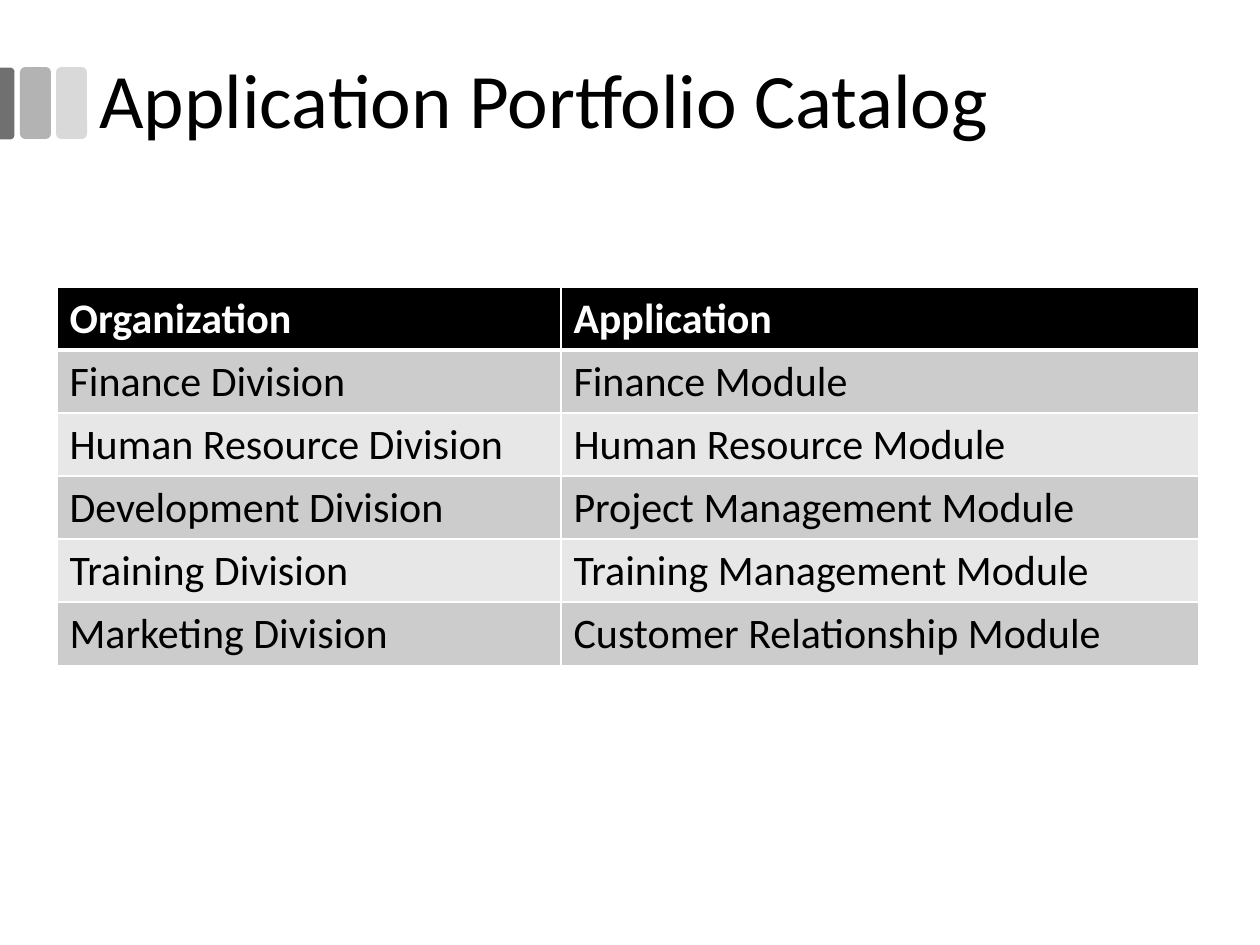
import pptx
import pptx.util
import pptx.dml.color
import pptx.enum.shapes
import pptx.enum.text
import pptx.oxml
import pptx.oxml.ns

RGB = pptx.dml.color.RGBColor
SHAPE = pptx.enum.shapes.MSO_SHAPE
ANCHOR = pptx.enum.text.MSO_ANCHOR

BLACK = RGB(0x00, 0x00, 0x00)
WHITE = RGB(0xFF, 0xFF, 0xFF)
DARK = RGB(0x70, 0x70, 0x70)
MID = RGB(0xB3, 0xB3, 0xB3)
PALE = RGB(0xD9, 0xD9, 0xD9)
BANDS = (RGB(0xCC, 0xCC, 0xCC), RGB(0xE7, 0xE7, 0xE7))

SCALE = 914400 // 126  # EMU in one px

ROWS = (
    ("Organization", "Application"),
    ("Finance Division", "Finance Module"),
    ("Human Resource Division", "Human Resource Module"),
    ("Development Division", "Project Management Module"),
    ("Training Division", "Training Management Module"),
    ("Marketing Division", "Customer Relationship Module"),
)


def emu(*px):
    return [pptx.util.Emu(n * SCALE) for n in px]


class Deck:
    font = "Calibri"

    def __init__(self, wide, high):
        self.prs = pptx.Presentation()
        self.prs.slide_width, self.prs.slide_height = emu(wide, high)
        self.slide = self.prs.slides.add_slide(self.prs.slide_layouts[6])

    def run(self, para, text, size, color, bold=False):
        run = para.add_run()
        run.text = text
        run.font.name = self.font
        run.font.size = pptx.util.Pt(size)
        run.font.bold = bold
        run.font.color.rgb = color

    def bar(self, box, color, kind=SHAPE.ROUNDED_RECTANGLE, turn=0, adjust=()):
        bar = self.slide.shapes.add_shape(kind, *emu(*box))
        bar.shadow.inherit = False
        bar.fill.solid()
        bar.fill.fore_color.rgb = color
        bar.line.fill.background()
        bar.rotation = turn
        for i, value in enumerate(adjust):
            bar.adjustments[i] = value

    def title(self, box, text):
        frame = self.slide.shapes.add_textbox(*emu(*box)).text_frame
        frame.word_wrap = True
        frame.vertical_anchor = ANCHOR.MIDDLE
        para = frame.paragraphs[0]
        para.line_spacing = 0.9
        self.run(para, text, 44, BLACK)

    def border(self, cell, side, width):
        line = pptx.oxml.parse_xml(
            f'<a:{side} {pptx.oxml.ns.nsdecls("a")} w="{pptx.util.Pt(width)}">'
            f'<a:solidFill><a:srgbClr val="{WHITE}"/></a:solidFill></a:{side}>')
        # Borders come before the fill, in the order they are added
        props = cell._tc.get_or_add_tcPr()
        fill = props.find(pptx.oxml.ns.qn("a:solidFill"))
        fill.addprevious(line)

    def table(self, left, top, widths, height, rows):
        box = emu(left, top, sum(widths), height * len(rows))
        table = self.slide.shapes.add_table(len(rows), len(widths), *box).table
        for col, width in zip(table.columns, emu(*widths)):
            col.width = width
        for r, texts in enumerate(rows):
            head = r == 0
            table.rows[r].height = emu(height)[0]
            for c, text in enumerate(texts):
                cell = table.cell(r, c)
                cell.fill.solid()
                cell.fill.fore_color.rgb = BLACK if head else BANDS[(r - 1) % 2]
                edges = {"lnL": 1, "lnR": 1, "lnT": 3 if r == 1 else 1,
                         "lnB": 3 if head else 1}
                for side, width in edges.items():
                    self.border(cell, side, width)
                self.run(cell.text_frame.paragraphs[0], text, 24,
                         WHITE if head else BLACK, head)

    def save(self):
        self.prs.save("out.pptx")


def main():
    deck = Deck(1260, 945)

    # Bars at the left edge
    deck.bar((56, 67, 31, 72), PALE)
    deck.bar((20, 67, 31, 72), MID)
    deck.bar((-29, 96, 72, 15), DARK, SHAPE.ROUND_2_SAME_RECTANGLE, 90, (0.29, 0))

    # Title
    deck.title((87, 21, 1086, 165), "Application Portfolio Catalog")

    # Catalog table
    deck.table(57, 287, (504, 638), 63, ROWS)

    deck.save()


if __name__ == "__main__":
    main()
